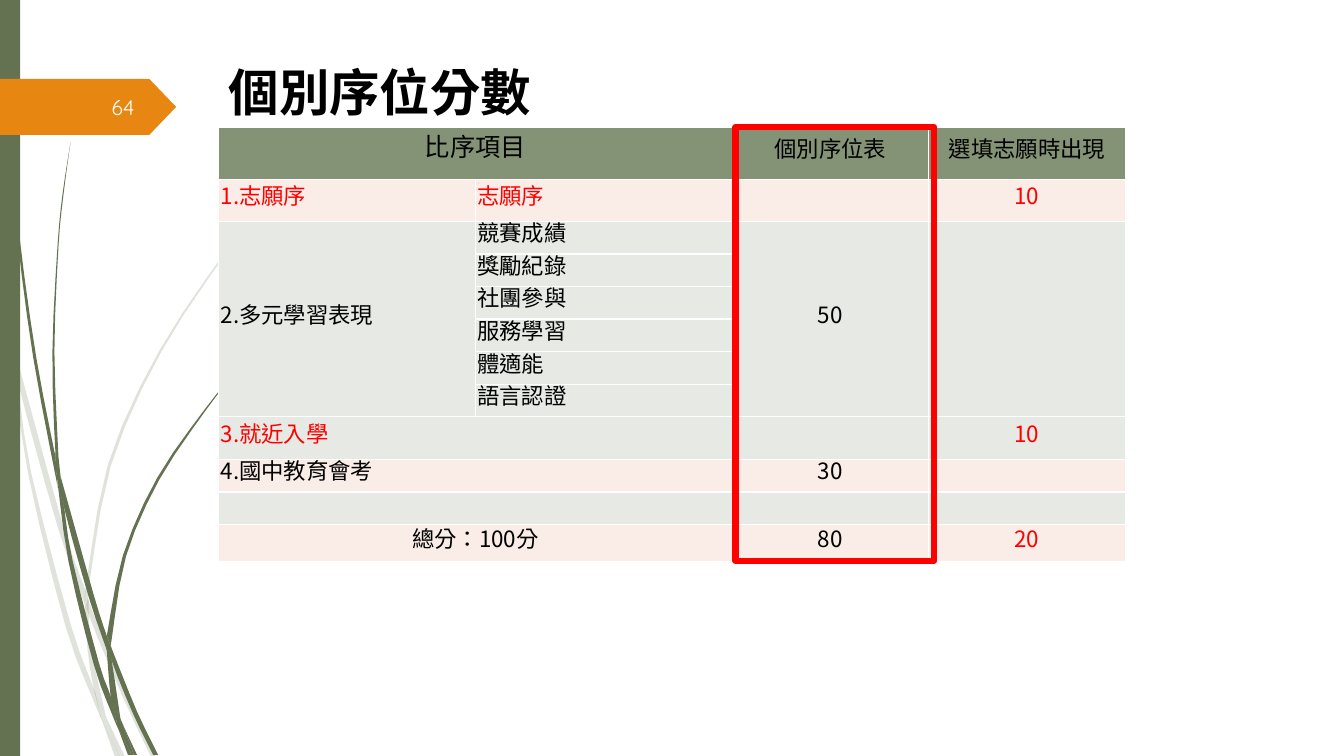
from dataclasses import dataclass
from lxml.etree import SubElement
from pptx import Presentation
from pptx.dml.color import RGBColor
from pptx.enum.shapes import MSO_SHAPE
from pptx.enum.text import MSO_ANCHOR, PP_ALIGN
from pptx.oxml import parse_xml
from pptx.oxml.ns import nsdecls, qn
from pptx.util import Cm, Pt


@dataclass(frozen=True)
class Theme:
    green: str = "647252"
    orange: str = "E78712"
    header: str = "849276"
    pink: str = "FAEDE7"
    grey: str = "E6E9E4"
    red: str = "FF0000"
    black: str = "000000"
    white: str = "FEFFFF"
    font: str = "Noto Sans CJK SC"
    number_font: str = "Quicksand"
    title_size: int = 36
    head_size: int = 18
    body_size: int = 16
    number_size: int = 15
    line_height: int = 15


theme = Theme()


def add_span(para, text, size, color, font, bold=False):
    span = para.add_run()
    span.text = text
    span.font.size = Pt(size)
    span.font.bold = bold
    span.font.name = font
    span.font.color.rgb = RGBColor.from_string(color)
    span.font._element.set("lang", "zh-TW")
    SubElement(span.font._element, qn("a:ea")).set("typeface", font)


def smooth(points, steps=3):
    padded = [points[0], *points, points[-1]]
    curve = [points[0]]
    for before, start, end, after in zip(padded, padded[1:], padded[2:], padded[3:]):
        for step in range(1, steps + 1):
            t = step / steps
            curve.append(tuple(
                (2 * b + (c - a) * t + (2 * a - 5 * b + 4 * c - d) * t ** 2
                 + (3 * b - a - 3 * c + d) * t ** 3) / 2
                for a, b, c, d in zip(before, start, end, after)))
    return [(Cm(x * 2.54), Cm(y * 2.54)) for x, y in curve]


deck = Presentation()
deck.slide_width, deck.slide_height = Cm(33.87), Cm(19.05)
page = deck.slides.add_slide(deck.slide_layouts[5])

pale_stems = [
    ([(0.11, 3.5), (0.08, 3.22), (0, 2.82)], [(0, 2.99), (0.1, 3.44)]),
    ([(0.14, 3.45), (0.17, 3.76), (0.57, 5.22), (0.84, 5.99)],
     [(0.85, 5.86), (0.62, 5.2), (0.14, 3.45)]),
    ([(0.88, 5.96), (0.88, 6.1), (1.23, 6.94), (1.5, 7.51)],
     [(1.55, 7.51), (1.27, 6.92), (0.92, 6.07)]),
    ([(1.05, 7.11), (1.19, 7.51)], [(1.24, 7.51)]),
    ([(0.11, 3.5), (0.28, 4.7), (0.65, 6.21), (0.92, 6.93), (1.01, 7.14)],
     [(0.99, 7.07), (0.93, 6.83), (0.7, 6.19), (0.31, 4.69), (0.17, 3.76)]),
    ([(0.84, 5.99), (0.87, 6.46), (0.93, 6.83), (0.96, 6.92), (1.05, 7.11)],
     [(1.04, 7.06), (0.91, 6.46), (0.88, 6.1), (0.88, 6.08)]),
    ([(3.12, 1.53), (2.89, 1.75), (2.68, 1.97), (2.28, 2.44), (1.58, 3.48), (1.07, 4.61),
      (0.85, 5.84), (0.85, 5.86)],
     [(0.88, 5.96), (0.88, 5.84), (1.1, 4.62), (1.6, 3.49), (2.29, 2.45), (2.68, 1.98),
      (2.9, 1.75), (3.12, 1.53)]),
    ([(1.01, 7.14), (1.14, 7.51)], [(1.19, 7.51)]),
    ([(0.85, 5.86), (0.84, 5.99), (0.88, 6.08)], [(0.88, 6.1), (0.88, 5.96)]),
    ([(0.93, 6.83), (0.99, 7.07), (1.01, 7.14), (1.19, 7.51)], [(1.05, 7.11), (0.96, 6.92)]),
]
dark_stems = [
    ([(0.03, 0), (0.03, 0.48), (0.07, 1.1), (0.17, 2.33), (0.33, 3.55), (0.56, 4.77), (0.57, 4.81)],
     [(0.55, 4.53), (0.36, 3.55), (0.19, 2.32), (0.08, 1.09), (0.05, 0.48), (0.03, 0)]),
    ([(0.6, 4.72), (0.64, 5.05), (0.88, 5.92), (1.06, 6.45)],
     [(1.06, 6.31), (0.93, 5.9), (0.6, 4.72)]),
    ([(1.1, 6.41), (1.11, 6.56), (1.32, 7.08), (1.52, 7.49)],
     [(1.57, 7.49), (1.36, 7.06), (1.13, 6.49)]),
    ([(0.57, 4.77), (0.68, 5.57), (0.93, 6.59), (1.11, 7.08), (1.17, 7.22)],
     [(1.16, 7.17), (1.1, 6.91), (0.98, 6.57), (0.72, 5.56), (0.64, 5.05)]),
    ([(0.7, 1.41), (0.62, 1.93), (0.57, 2.45), (0.52, 3.49), (0.55, 4.49), (0.6, 4.72)],
     [(0.58, 4.53), (0.54, 3.49), (0.58, 2.45), (0.63, 1.93), (0.7, 1.41)]),
    ([(1.22, 7.19), (1.33, 7.49)], [(1.36, 7.49)]),
    ([(0.55, 4.49), (0.55, 4.53), (0.57, 4.77), (0.64, 5.05)], [(0.6, 4.72)]),
    ([(2.6, 3.44), (2.31, 3.73), (2.04, 4.05), (1.56, 4.74), (1.22, 5.51), (1.06, 6.31)],
     [(1.1, 6.41), (1.11, 6.33), (1.25, 5.52), (1.58, 4.76), (2.05, 4.06), (2.31, 3.74),
      (2.61, 3.44)]),
    ([(1.17, 7.22), (1.27, 7.49)], [(1.31, 7.49)]),
    ([(1.06, 6.45), (1.1, 6.92), (1.16, 7.06), (1.22, 7.19)],
     [(1.2, 7.16), (1.11, 6.56), (1.09, 6.51)]),
    ([(1.06, 6.31), (1.06, 6.45), (1.11, 6.56)], [(1.1, 6.41)]),
    ([(1.1, 6.91), (1.16, 7.17), (1.17, 7.22), (1.31, 7.49)],
     [(1.33, 7.49), (1.22, 7.19), (1.16, 7.06)]),
]
for stems, opacity in ((pale_stems, "20000"), (dark_stems, "100000")):
    for left_edge, right_edge in stems:
        outline = smooth(left_edge) + smooth(right_edge)
        builder = page.shapes.build_freeform(*outline[0])
        builder.add_line_segments(outline[1:], close=True)
        stem = builder.convert_to_shape()
        stem.shadow.inherit = False
        stem.fill.solid()
        stem.fill.fore_color.rgb = RGBColor.from_string(theme.green)
        color_element = stem._element.spPr.find(qn("a:solidFill"))[0]
        SubElement(color_element, qn("a:alpha")).set("val", opacity)
        stem.line.fill.background()

side_bar = page.shapes.add_shape(MSO_SHAPE.RECTANGLE, Cm(0), Cm(0), Cm(0.51), Cm(19.05))
number_tag = page.shapes.add_shape(MSO_SHAPE.PENTAGON, Cm(-0.02), Cm(1.99), Cm(4.46), Cm(1.41))
number_tag.adjustments[0] = 0.48
for box, color in ((side_bar, theme.green), (number_tag, theme.orange)):
    box.shadow.inherit = False
    box.fill.solid()
    box.fill.fore_color.rgb = RGBColor.from_string(color)
    box.line.fill.background()

title = page.shapes.title
title.left, title.top, title.width, title.height = Cm(5.51), Cm(1.42), Cm(24.77), Cm(3.56)
title.text_frame.vertical_anchor = MSO_ANCHOR.TOP
para = title.text_frame.paragraphs[0]
para.alignment = PP_ALIGN.LEFT
add_span(para, "個別序位分數", theme.title_size, theme.black, theme.font, True)

columns = [6.47, 6.47, 4.95, 4.96]
rows = [1.32, 1.06] + [0.82] * 6 + [1.08, 0.82, 0.82, 0.93]
row_fills = [theme.header, theme.pink] + [theme.grey] * 7 + [theme.pink, theme.grey, theme.pink]
entries = [
    ["比序項目", "", "個別序位表", "選填志願時出現"],
    ["1.志願序", "志願序", "", "10"],
    ["2.多元學習表現", "競賽成績", "50", ""],
    ["", "獎勵紀錄", "", ""],
    ["", "社團參與", "", ""],
    ["", "服務學習", "", ""],
    ["", "體適能", "", ""],
    ["", "語言認證", "", ""],
    ["3.就近入學", "", "", "10"],
    ["4.國中教育會考", "", "30", ""],
    ["", "", "", ""],
    ["總分：100分", "", "80", "20"],
]
red_cells = {(1, 0), (1, 1), (1, 3), (8, 0), (8, 3), (11, 3)}
centered_cells = {(0, 0), (11, 0)}

table = page.shapes.add_table(len(rows), len(columns), Cm(5.51), Cm(3.2),
                              Cm(sum(columns)), Cm(sum(rows))).table
table.first_row = False
table.horz_banding = False
for column, width in zip(table.columns, columns):
    column.width = Cm(width)
for row, height in zip(table.rows, rows):
    row.height = Cm(height)

for r, texts in enumerate(entries):
    for c, text in enumerate(texts):
        cell = table.cell(r, c)
        cell.fill.solid()
        cell.fill.fore_color.rgb = RGBColor.from_string(row_fills[r])
        cell.vertical_anchor = MSO_ANCHOR.MIDDLE
        cell.margin_left = cell.margin_right = Cm(0.05)
        cell.margin_top = cell.margin_bottom = Cm(0)
        for position, side in enumerate("LRTB"):
            cell._tc.tcPr.insert(position, parse_xml(
                f'<a:ln{side} {nsdecls("a")} w="12700"><a:solidFill>'
                f'<a:srgbClr val="FFFFFF"/></a:solidFill></a:ln{side}>'))
        para = cell.text_frame.paragraphs[0]
        para.line_spacing = Pt(theme.line_height)
        centered = c > 1 or (r, c) in centered_cells
        para.alignment = PP_ALIGN.CENTER if centered else PP_ALIGN.LEFT
        if text:
            size = theme.head_size if (r, c) == (0, 0) else theme.body_size
            color = theme.red if (r, c) in red_cells else theme.black
            add_span(para, text, size, color, theme.font)

for r in (0, 8, 9, 10, 11):
    table.cell(r, 0).merge(table.cell(r, 1))
for c in (0, 2, 3):
    table.cell(2, c).merge(table.cell(7, c))

highlight = page.shapes.add_shape(MSO_SHAPE.RECTANGLE, Cm(18.54), Cm(3.2), Cm(5), Cm(10.93))
highlight.shadow.inherit = False
highlight.fill.background()
highlight.line.color.rgb = RGBColor.from_string(theme.red)
highlight.line.width = Pt(4.5)
SubElement(highlight.line._ln, qn("a:round"))

page_number = page.shapes.add_textbox(Cm(1.48), Cm(2.18), Cm(2.16), Cm(1.02))
page_number.text_frame.word_wrap = True
page_number.text_frame.vertical_anchor = MSO_ANCHOR.MIDDLE
para = page_number.text_frame.paragraphs[0]
para.alignment = PP_ALIGN.RIGHT
add_span(para, "64", theme.number_size, theme.white, theme.number_font)

deck.save("out.pptx")
